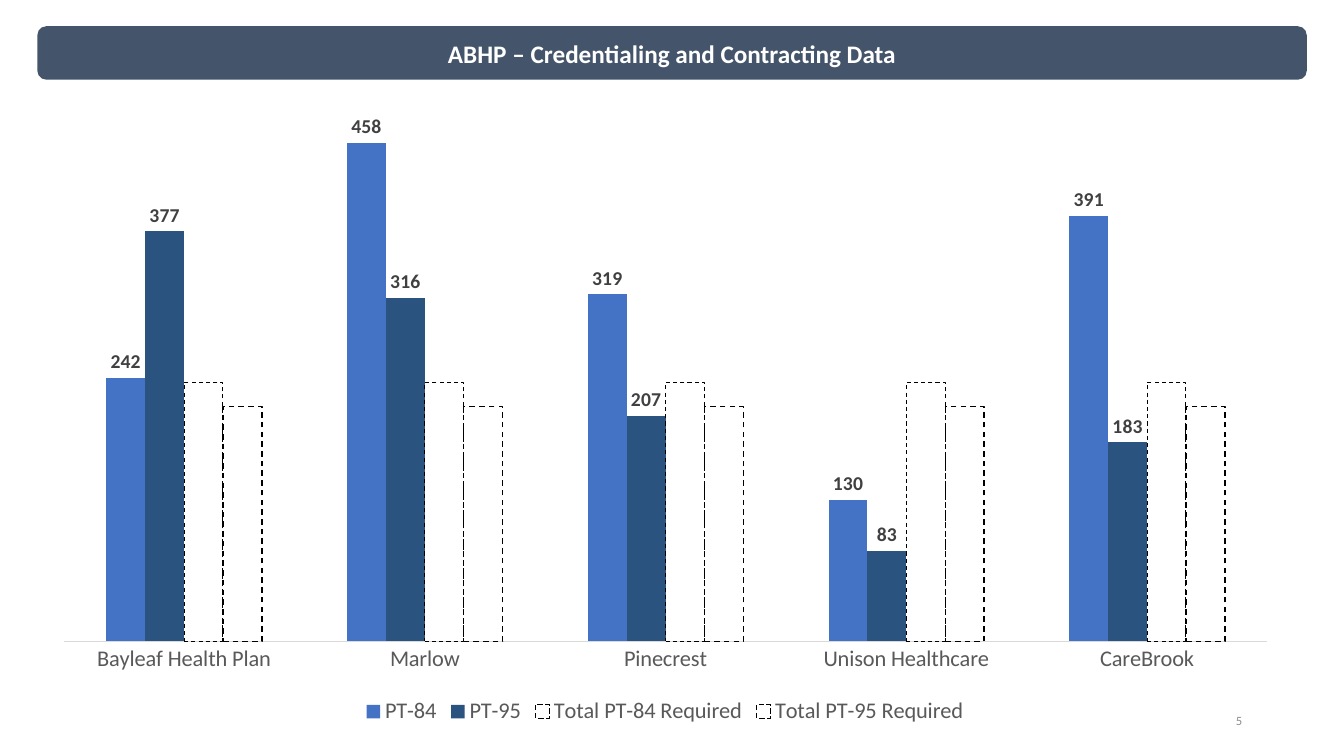
"""Build the credentialing and contracting slide."""
import copy
import dataclasses

import lxml.etree
import pptx
import pptx.chart.data
import pptx.dml.color
import pptx.enum.chart
import pptx.enum.dml
import pptx.enum.shapes
import pptx.enum.text
import pptx.oxml.ns
import pptx.util


@dataclasses.dataclass(frozen=True)
class Theme:
    """Colours, type sizes and font of the slide."""
    font: str = "Calibri"
    banner: str = "44546A"
    white: str = "FFFFFF"
    black: str = "000000"
    page: str = "8C8C8C"
    axis_text: str = "595959"
    axis_line: str = "D9D9D9"
    label: str = "404040"
    first_bar: str = "4472C4"
    second_bar: str = "2A547F"
    title_size: int = 18
    axis_size: int = 16
    label_size: int = 14
    chart_size: int = 10
    page_size: int = 9


THEME = Theme()
WIDTH, HEIGHT = pptx.util.Inches(13.33), pptx.util.Inches(7.5)
PLANS = ["Bayleaf Health Plan", "Marlow", "Pinecrest", "Unison Healthcare", "CareBrook"]
CONTRACTED = [
    ("PT-84", [242, 458, 319, 130, 391], THEME.first_bar),
    ("PT-95", [377, 316, 207, 83, 183], THEME.second_bar),
]
REQUIRED = [
    ("Total PT-84 Required", 238, 0.75),
    ("Total PT-95 Required", 216, 1),
]
PLOT_AREA = {"x": 2.1, "y": 2, "w": 95.9, "h": 84.3}


def place(left, top, width, height):
    """Turn percentages of the slide into a position and size."""
    shares = zip((left, top, width, height), (WIDTH, HEIGHT, WIDTH, HEIGHT))
    return [round(share * length / 100) for share, length in shares]


def rgb(colour):
    """Return a colour object for a hex string."""
    return pptx.dml.color.RGBColor.from_string(colour)


def style_font(font, size, colour, bold=False):
    """Apply the theme font with a size, colour and weight."""
    font.name = THEME.font
    font.size = pptx.util.Pt(size)
    font.bold = bold
    font.color.rgb = rgb(colour)


def write(shape, text, alignment, size, colour, bold=False):
    """Write one vertically centred line into a shape."""
    frame = shape.text_frame
    frame.word_wrap = True
    frame.vertical_anchor = pptx.enum.text.MSO_ANCHOR.MIDDLE
    paragraph = frame.paragraphs[0]
    paragraph.alignment = alignment
    run = paragraph.add_run()
    run.text = text
    style_font(run.font, size, colour, bold)


def add_banner(slide, text, area):
    """Add the rounded title banner."""
    banner = slide.shapes.add_shape(
        pptx.enum.shapes.MSO_SHAPE.ROUNDED_RECTANGLE, *place(*area))
    banner.shadow.inherit = False
    banner.fill.solid()
    banner.fill.fore_color.rgb = rgb(THEME.banner)
    banner.line.fill.background()
    write(banner, text, pptx.enum.text.PP_ALIGN.CENTER, THEME.title_size, THEME.white, True)


def add_page_number(slide, number, area):
    """Add the page number at the lower right."""
    box = slide.shapes.add_textbox(*place(*area))
    write(box, number, pptx.enum.text.PP_ALIGN.RIGHT, THEME.page_size, THEME.page)


def style_contracted(series, colour):
    """Fill a series and show its values above the bars."""
    series.format.fill.solid()
    series.format.fill.fore_color.rgb = rgb(colour)
    labels = series.data_labels
    labels.show_value = True
    labels.position = pptx.enum.chart.XL_LABEL_POSITION.OUTSIDE_END
    style_font(labels.font, THEME.label_size, THEME.label, True)


def style_required(series, line_width):
    """Draw a series as dashed outlines."""
    series.format.fill.background()
    line = series.format.line
    line.color.rgb = rgb(THEME.black)
    line.width = pptx.util.Pt(line_width)
    line.dash_style = pptx.enum.dml.MSO_LINE.DASH


def style_axes(chart):
    """Show a plain category axis and hide the value axis."""
    values = chart.value_axis
    values.minimum_scale, values.maximum_scale = 0, 500
    values.has_major_gridlines = False
    values.visible = False
    categories = chart.category_axis
    categories.major_tick_mark = pptx.enum.chart.XL_TICK_MARK.NONE
    categories.format.line.color.rgb = rgb(THEME.axis_line)
    categories.format.line.width = pptx.util.Pt(0.75)
    style_font(categories.tick_labels.font, THEME.axis_size, THEME.axis_text)


def fix_plot_area(chart, shares):
    """Place the inner plot area by percentages of the chart."""
    qualified = pptx.oxml.ns.qn
    plot_area = chart.plots[0]._element.getparent()
    for layout in plot_area.findall(qualified("c:layout")):
        plot_area.remove(layout)
    layout = lxml.etree.Element(qualified("c:layout"))
    plot_area.insert(0, layout)
    manual = lxml.etree.SubElement(layout, qualified("c:manualLayout"))
    settings = {"layoutTarget": "inner", "xMode": "edge", "yMode": "edge"}
    settings.update({name: share / 100 for name, share in shares.items()})
    for name, value in settings.items():
        lxml.etree.SubElement(manual, qualified(f"c:{name}"), val=str(value))


def move_to_right_axis(chart, first):
    """Move the series from the given index on to hidden right-hand axes."""
    qualified = pptx.oxml.ns.qn
    left_bars = chart.plots[0]._element
    right_bars = copy.deepcopy(left_bars)
    for bars, unwanted in ((left_bars, slice(first, None)), (right_bars, slice(first))):
        for series in bars.findall(qualified("c:ser"))[unwanted]:
            bars.remove(series)
    value_axis = chart.value_axis._element
    right_values = copy.deepcopy(value_axis)
    right_categories = copy.deepcopy(chart.category_axis._element)
    right_categories.find(qualified("c:delete")).set("val", "1")
    right_values.find(qualified("c:axPos")).set("val", "r")
    right_values.find(qualified("c:crosses")).set("val", "max")
    identifiers = [axis.get("val") for axis in left_bars.findall(qualified("c:axId"))]
    renamed = dict(zip(identifiers, ("5001", "5002")))
    for part in (right_bars, right_values, right_categories):
        for reference in part.iter(qualified("c:axId"), qualified("c:crossAx")):
            reference.set("val", renamed[reference.get("val")])
    left_bars.addnext(right_bars)
    value_axis.addnext(right_values)
    right_values.addnext(right_categories)


def add_plan_chart(slide, area):
    """Add the clustered columns for all plans."""
    data = pptx.chart.data.CategoryChartData(number_format="0")
    data.categories = PLANS
    for name, values, _ in CONTRACTED:
        data.add_series(name, values)
    for name, value, _ in REQUIRED:
        data.add_series(name, [value] * len(PLANS))
    chart = slide.shapes.add_chart(
        pptx.enum.chart.XL_CHART_TYPE.COLUMN_CLUSTERED, *place(*area), data).chart
    style_font(chart.font, THEME.chart_size, THEME.black)
    chart.has_title = False
    plot = chart.plots[0]
    plot.gap_width, plot.overlap = 219, 0
    plot.vary_by_categories = False
    series = list(plot.series)
    for bars, (_, _, colour) in zip(series, CONTRACTED):
        style_contracted(bars, colour)
    for bars, (_, _, line_width) in zip(series[len(CONTRACTED):], REQUIRED):
        style_required(bars, line_width)
    style_axes(chart)
    fix_plot_area(chart, PLOT_AREA)
    move_to_right_axis(chart, len(CONTRACTED))
    chart.has_legend = True
    chart.legend.position = pptx.enum.chart.XL_LEGEND_POSITION.BOTTOM
    chart.legend.include_in_layout = False
    style_font(chart.legend.font, THEME.axis_size, THEME.axis_text)


def main():
    """Build and save the presentation."""
    presentation = pptx.Presentation()
    presentation.slide_width, presentation.slide_height = WIDTH, HEIGHT
    slide = presentation.slides.add_slide(presentation.slide_layouts[6])
    add_page_number(slide, "5", (70.67, 92.67, 22.5, 5.33))
    add_banner(slide, "ABHP – Credentialing and Contracting Data", (2.78, 3.47, 94.45, 7.07))
    add_plan_chart(slide, (2.78, 11.2, 93.4, 85.33))
    presentation.save("out.pptx")


if __name__ == "__main__":
    main()
